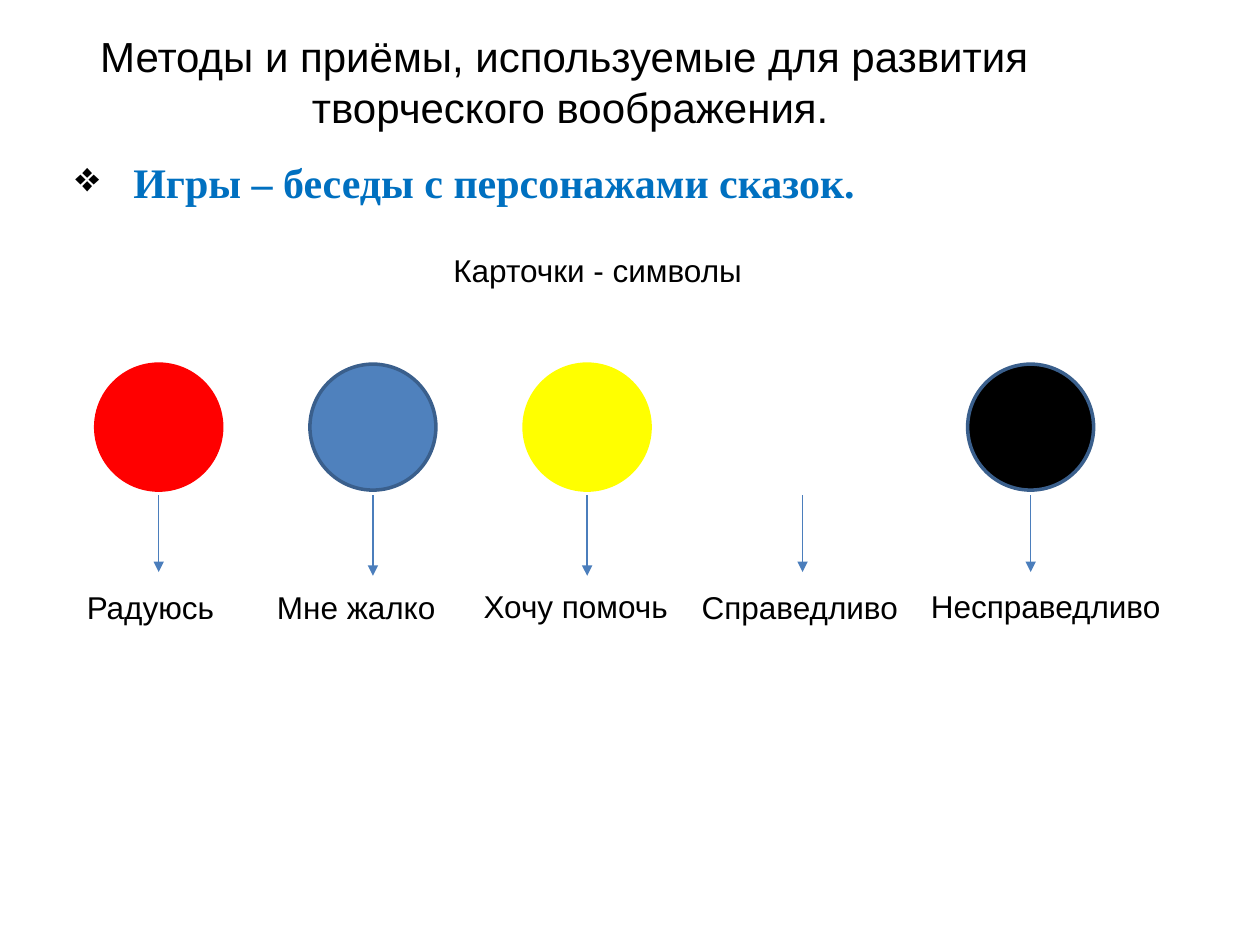
from lxml import etree
from pptx import Presentation
from pptx.dml.color import RGBColor
from pptx.enum.shapes import MSO_CONNECTOR, MSO_SHAPE
from pptx.enum.text import MSO_ANCHOR, PP_ALIGN
from pptx.oxml.ns import qn
from pptx.util import Inches, Pt

OVAL = MSO_SHAPE.OVAL
LINE = MSO_CONNECTOR.STRAIGHT
CENTER, LEFT = PP_ALIGN.CENTER, PP_ALIGN.LEFT
MIDDLE, TOP = MSO_ANCHOR.MIDDLE, MSO_ANCHOR.TOP

BLACK = RGBColor(0x00, 0x00, 0x00)
WHITE = RGBColor(0xFF, 0xFF, 0xFF)
RED = RGBColor(0xFF, 0x00, 0x00)
YELLOW = RGBColor(0xFF, 0xFF, 0x00)
BLUE = RGBColor(0x4F, 0x81, 0xBD)
NAVY = RGBColor(0x3A, 0x5F, 0x8C)
STEEL = RGBColor(0x4B, 0x7E, 0xBC)
AZURE = RGBColor(0x00, 0x70, 0xC0)


class Board:
    """Holds the style and the current slide."""

    base = {"name": "Arial", "size": Pt(18), "bold": False}

    def __init__(self, deck):
        self.slide = deck.slides.add_slide(deck.slide_layouts[6])

    def text(self, words, left, top, width, height, color=BLACK,
             align=LEFT, anchor=TOP, wrap=False, **style):
        box = self.slide.shapes.add_textbox(
            Inches(left), Inches(top), Inches(width), Inches(height))
        frame = box.text_frame
        frame.word_wrap = wrap
        frame.vertical_anchor = anchor
        para = frame.paragraphs[0]
        para.text = words
        para.alignment = align
        for run in para.runs:
            for key, value in {**self.base, **style}.items():
                setattr(run.font, key, value)
            run.font.color.rgb = color
        return box

    def bullet(self, box, sign, indent, color):
        props = box.text_frame.paragraphs[0]._p.get_or_add_pPr()
        props.set("marL", str(Inches(indent)))
        props.set("indent", str(-Inches(indent)))
        tint = etree.SubElement(props, qn("a:buClr"))
        etree.SubElement(tint, qn("a:srgbClr"), val=str(color))
        etree.SubElement(props, qn("a:buChar"), char=sign)

    def disc(self, left, top, size, fill, edge):
        disc = self.slide.shapes.add_shape(
            OVAL, Inches(left), Inches(top), Inches(size), Inches(size))
        disc.shadow.inherit = False
        disc.fill.solid()
        disc.fill.fore_color.rgb = fill
        disc.line.color.rgb = edge
        disc.line.width = Pt(2)

    def arrow(self, x, top, end):
        arrow = self.slide.shapes.add_connector(
            LINE, Inches(x), Inches(top), Inches(x), Inches(end))
        arrow.line.color.rgb = STEEL
        arrow.line.width = Pt(0.75)
        etree.SubElement(arrow.line._get_or_add_ln(), qn("a:tailEnd"),
                         type="triangle")
        etree.SubElement(arrow._element.spPr, qn("a:effectLst"))


def main():
    deck = Presentation()
    deck.slide_width, deck.slide_height = Inches(10), Inches(7.5)
    board = Board(deck)

    # Title
    board.text("Методы и приёмы, используемые для развития \v"
               "творческого воображения.", 0.43, 0.21, 8.19, 0.87,
               align=CENTER, anchor=MIDDLE, wrap=True, size=Pt(24))

    # Bulleted topic
    topic = board.text("Игры – беседы с персонажами сказок.",
                       0.5, 1.15, 9, 5.55, AZURE, wrap=True,
                       name="Times New Roman", size=Pt(24), bold=True)
    topic.text_frame.margin_top = Inches(0.09)
    board.bullet(topic, "❖", 0.46, BLACK)

    # Heading of the cards
    board.text("Карточки - символы", 3.5, 1.94, 2.52, 0.4)

    # Cards: disc left, fill, edge, arrow end, label, its left, top, width
    cards = [
        (0.76, RED, RED, 4.54, "Радуюсь", 0.59, 4.62, 1.32),
        (2.46, BLUE, NAVY, 4.57, "Мне жалко", 2.1, 4.62, 1.64),
        (4.16, YELLOW, YELLOW, 4.57, "Хочу помочь", 3.74, 4.61, 1.73),
        (5.87, WHITE, WHITE, 4.54, "Справедливо", 5.47, 4.62, 1.82),
        (7.68, BLACK, NAVY, 4.54, "Несправедливо", 7.29, 4.61, 2.04),
    ]
    size = 1
    for left, fill, edge, end, label, x, y, width in cards:
        board.disc(left, 2.89, size, fill, edge)
        board.arrow(left + size / 2, 3.93, end)
        board.text(label, x, y, width, 0.4)

    deck.save("out.pptx")


if __name__ == "__main__":
    main()
